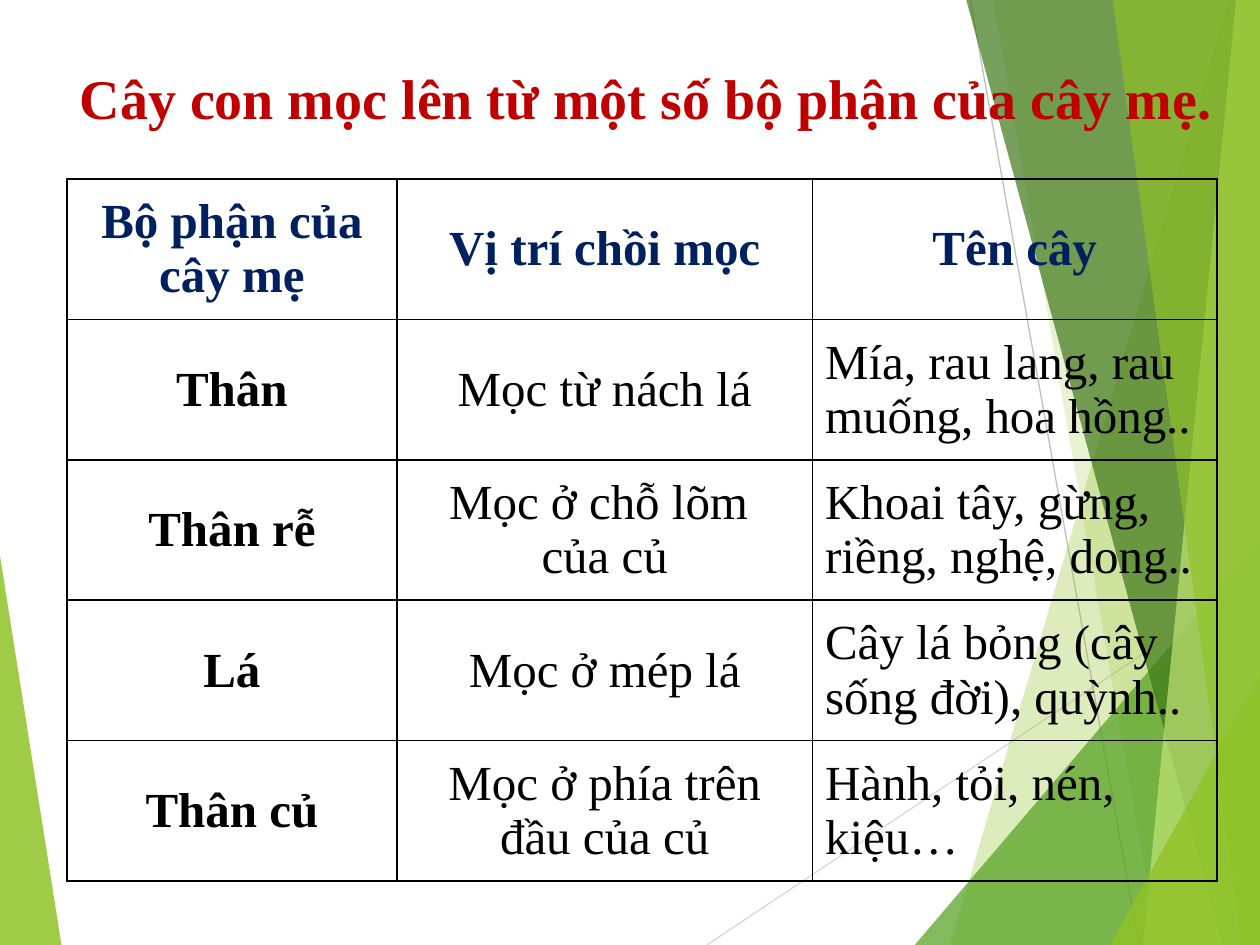
from lxml import etree
from pptx import Presentation
from pptx.dml.color import RGBColor
from pptx.enum.shapes import MSO_CONNECTOR
from pptx.enum.text import MSO_ANCHOR, MSO_AUTO_SIZE, PP_ALIGN
from pptx.oxml import parse_xml
from pptx.oxml.ns import qn
from pptx.util import Cm, Pt

STRAIGHT = MSO_CONNECTOR.STRAIGHT
MIDDLE = MSO_ANCHOR.MIDDLE
FIXED = MSO_AUTO_SIZE.NONE
LEFT, CENTER = PP_ALIGN.LEFT, PP_ALIGN.CENTER

LIME = RGBColor(0x90, 0xC2, 0x26)
GREEN = RGBColor(0x54, 0xA0, 0x21)
FOREST = RGBColor(0x3F, 0x78, 0x19)
PALE = RGBColor(0xC0, 0xE4, 0x74)
SILVER = RGBColor(0xD9, 0xD9, 0xD9)
GRAY = RGBColor(0xBF, 0xBF, 0xBF)
RED = RGBColor(0xC0, 0x00, 0x00)
NAVY = RGBColor(0x00, 0x20, 0x60)
BLACK = RGBColor(0x00, 0x00, 0x00)
FONT = "Times New Roman"
WIDE, HIGH = 25.4, 19.05


def add_facet(points, color, alpha):
    pen = slide.shapes.build_freeform(Cm(points[0][0]), Cm(points[0][1]))
    pen.add_line_segments([(Cm(x), Cm(y)) for x, y in points[1:]])
    facet = pen.convert_to_shape()
    facet.shadow.inherit = False
    facet.fill.solid()
    facet.fill.fore_color.rgb = color
    facet.line.fill.background()
    tint = facet._element.spPr.find(".//" + qn("a:srgbClr"))
    etree.SubElement(tint, qn("a:alpha")).set("val", str(alpha * 1000))


def set_font(para, size, color, bold):
    para.font.name = FONT
    para.font.size = Pt(size)
    para.font.bold = bold
    para.font.color.rgb = color


deck = Presentation()
deck.slide_width, deck.slide_height = Cm(WIDE), Cm(HIGH)
slide = deck.slides.add_slide(deck.slide_layouts[5])

add_facet([(0, 11.2), (1.24, HIGH), (0, HIGH)], LIME, 85)

rays = [
    ((14.25, HIGH), (WIDE, 11.61), SILVER),
    ((19.56, 0), (22.96, HIGH), GRAY),
]
for start, end, color in rays:
    ray = slide.shapes.add_connector(
        STRAIGHT, Cm(start[0]), Cm(start[1]), Cm(end[0]), Cm(end[1])
    )
    ray.line.color.rgb = color
    ray.line.width = Pt(0.75)
    etree.SubElement(ray._element.spPr, qn("a:effectLst"))

corner = [(WIDE, HIGH), (WIDE, 0)]
facets = [
    ([(24.77, 0), (19.15, HIGH)] + corner, LIME, 30),
    ([(20.02, 0), (23.34, HIGH)] + corner, LIME, 20),
    ([(18.44, HIGH), (WIDE, 10.9), (WIDE, HIGH)], GREEN, 72),
    ([(19.48, 0), (24.64, HIGH)] + corner, FOREST, 70),
    ([(24.92, 0), (23.04, HIGH)] + corner, PALE, 70),
    ([(22.43, 0), (25.04, HIGH)] + corner, LIME, 65),
    ([(22.38, HIGH), (WIDE, 13.59), (WIDE, HIGH)], LIME, 80),
]
for points, color, alpha in facets:
    add_facet(points, color, alpha)

title = slide.shapes.title
slide.shapes._spTree.append(title._element)
title.left, title.top = Cm(1.35), Cm(1.14)
title.width, title.height = Cm(23.93), Cm(1.63)
frame = title.text_frame
frame.text = "Cây con mọc lên từ một số bộ phận của cây mẹ."
frame.auto_size = FIXED
frame.vertical_anchor = MIDDLE
frame.paragraphs[0].alignment = LEFT
set_font(frame.paragraphs[0], 32, RED, True)

rows = [
    ("Bộ phận của cây mẹ", "Vị trí chồi mọc", "Tên cây"),
    ("Thân", "Mọc từ nách lá", "Mía, rau lang, rau muống, hoa hồng.."),
    ("Thân rễ", "Mọc ở chỗ lõm \ncủa củ", "Khoai tây, gừng, riềng, nghệ, dong.."),
    ("Lá", "Mọc ở mép lá", "Cây lá bỏng (cây sống đời), quỳnh.."),
    ("Thân củ", "Mọc ở phía trên đầu của củ", "Hành, tỏi, nén, kiệu…"),
]
widths = [6.65, 8.38, 8.15]
step = 2.83
table = slide.shapes.add_table(
    len(rows), len(widths), Cm(1.35), Cm(3.61), Cm(sum(widths)), Cm(step * len(rows))
).table
table.first_row = table.horz_banding = False
for col, width in zip(table.columns, widths):
    col.width = Cm(width)

EDGE = (
    '<a:{} xmlns:a="http://schemas.openxmlformats.org/drawingml/2006/main" w="12700">'
    '<a:solidFill><a:srgbClr val="000000"/></a:solidFill></a:{}>'
)
for r, row in enumerate(rows):
    table.rows[r].height = Cm(step)
    for c, text in enumerate(row):
        cell = table.cell(r, c)
        cell.text = text
        cell.vertical_anchor = MIDDLE
        props = cell._tc.get_or_add_tcPr()
        for side in ("lnL", "lnR", "lnT", "lnB"):
            props.append(parse_xml(EDGE.format(side, side)))
        cell.fill.background()
        for para in cell.text_frame.paragraphs:
            para.alignment = LEFT if r and c == 2 else CENTER
            set_font(para, 28, BLACK if r else NAVY, r == 0 or c == 0)

deck.save("out.pptx")
